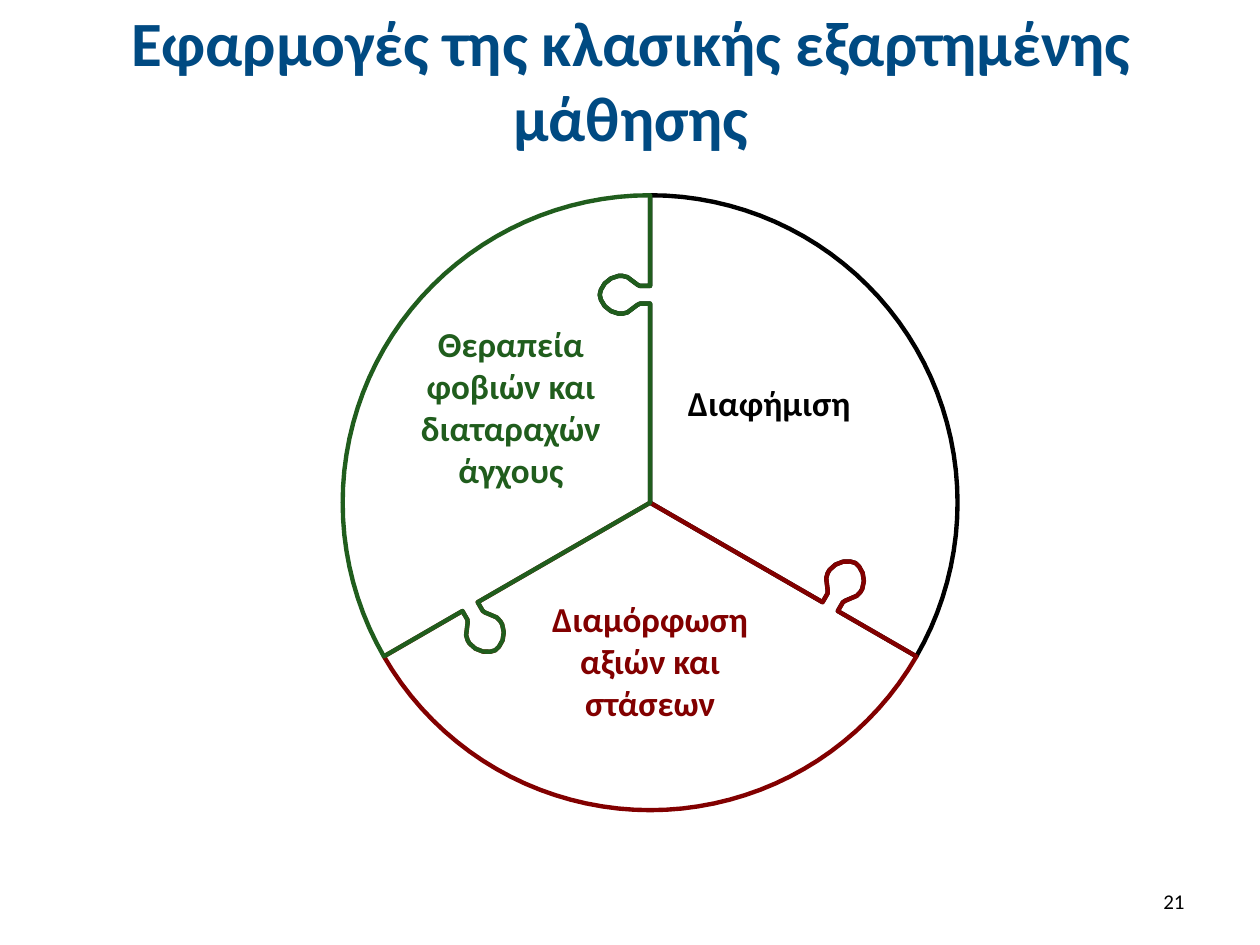
from math import cos, sin, radians
from pptx import Presentation
from pptx.dml.color import RGBColor
from pptx.enum.text import MSO_ANCHOR, PP_ALIGN
from pptx.util import Inches, Pt

BLUE = RGBColor(0x00, 0x4A, 0x82)
BLACK = RGBColor(0x00, 0x00, 0x00)
RED = RGBColor(0x82, 0x00, 0x00)
GREEN = RGBColor(0x20, 0x5D, 0x1D)
FONT = "Calibri"

# Knob outline: distance from the seam, half of the knob's width there
KNOB = [(0, .07), (.08, .07), (.1, .08), (.14, .11), (.18, .14), (.22, .15),
        (.25, .15), (.31, .13), (.36, .09), (.39, .04), (.4, 0)]
KNOB_MID = 1.65  # distance of the knob from the hub
STEP = 120       # degrees per piece


def style(shape, text, size, color, bold, align, anchor):
    frame = shape.text_frame
    frame.text = text
    frame.word_wrap = True
    frame.vertical_anchor = anchor
    par = frame.paragraphs[0]
    par.alignment = align
    font = par.runs[0].font
    font.name, font.size, font.bold = FONT, Pt(size), bold
    font.color.rgb = color


def place(shape, box):
    shape.left, shape.top, shape.width, shape.height = map(Inches, box)


def add_title(slide, box, text):
    title = slide.shapes.title
    place(title, box)
    style(title, text, 36, BLUE, True, PP_ALIGN.CENTER, MSO_ANCHOR.MIDDLE)


def add_label(slide, box, text, color):
    label = slide.shapes.add_textbox(*map(Inches, box))
    style(label, text, 20, color, True, PP_ALIGN.CENTER, MSO_ANCHOR.TOP)


def add_number(slide, box, text):
    number = slide.shapes.add_textbox(*map(Inches, box))
    style(number, text, 12, BLACK, False, PP_ALIGN.RIGHT, MSO_ANCHOR.MIDDLE)


def seam(turn, rad):
    """Points from hub to rim, turned clockwise from straight up."""
    rise = [(KNOB_MID - half, off) for off, half in KNOB]
    fall = [(KNOB_MID + half, off) for off, half in KNOB[-2::-1]]
    c, s = cos(radians(turn)), sin(radians(turn))
    return [(far * s - off * c, -far * c - off * s)
            for far, off in [(0, 0), *rise, *fall, (rad, 0)]]


def add_puzzle(slide, box, colors):
    left, top, size, _ = box
    rad = size / 2
    for i, color in enumerate(colors):
        start, end = i * STEP, (i + 1) * STEP
        # Out along one seam, back round the rim, in along the other
        rim = [(rad * sin(radians(a)), -rad * cos(radians(a)))
               for a in range(end - 3, start, -3)]
        spots = seam(end, rad) + rim + seam(start, rad)[:0:-1]
        spots = [(Inches(left + rad + x), Inches(top + rad + y))
                 for x, y in spots]
        path = slide.shapes.build_freeform(*spots[0])
        path.add_line_segments(spots[1:], close=True)
        piece = path.convert_to_shape()
        piece.shadow.inherit = False
        piece.fill.background()
        piece.line.color.rgb = color
        piece.line.width = Pt(2.5)


def main():
    deck = Presentation()
    deck.slide_width, deck.slide_height = Inches(10), Inches(7.5)
    slide = deck.slides.add_slide(deck.slide_layouts[5])

    add_title(slide, (.51, .13, 9, .99),
              "Εφαρμογές της κλασικής εξαρτημένης μάθησης")
    add_number(slide, (7.17, 6.95, 2.33, .4), "21")
    add_puzzle(slide, (2.72, 1.55, 4.88, 4.88), (BLACK, RED, GREEN))

    # Labels on the pieces
    labels = [
        ((4.06, 4.69, 2.2, 1.11), "Διαμόρφωση αξιών και στάσεων", RED),
        ((5.11, 2.98, 1.99, .44), "Διαφήμιση", BLACK),
        ((3.07, 2.51, 1.97, 1.45), "Θεραπεία φοβιών και διαταραχών άγχους",
         GREEN),
    ]
    for box, text, color in labels:
        add_label(slide, box, text, color)

    deck.save("out.pptx")


if __name__ == "__main__":
    main()
